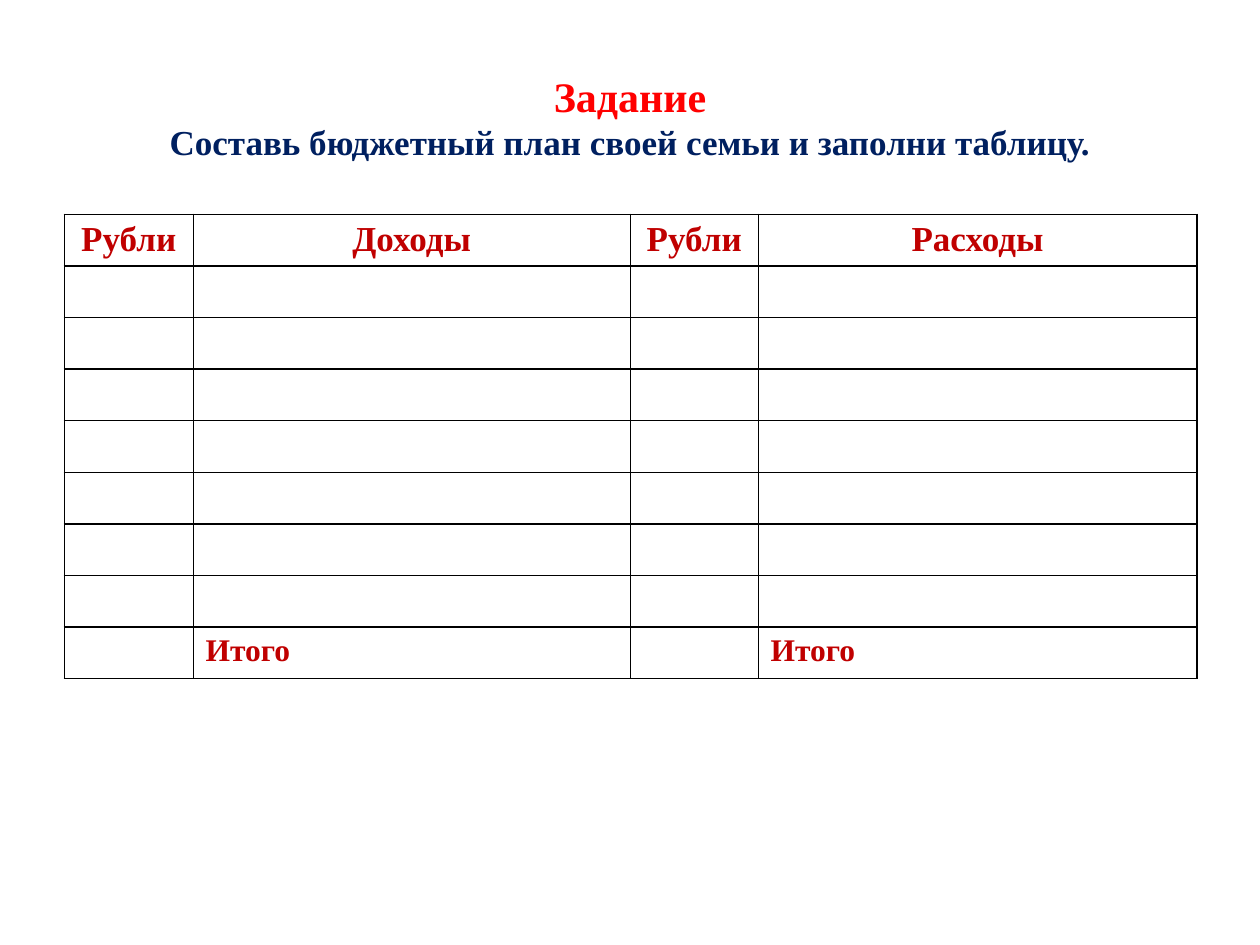
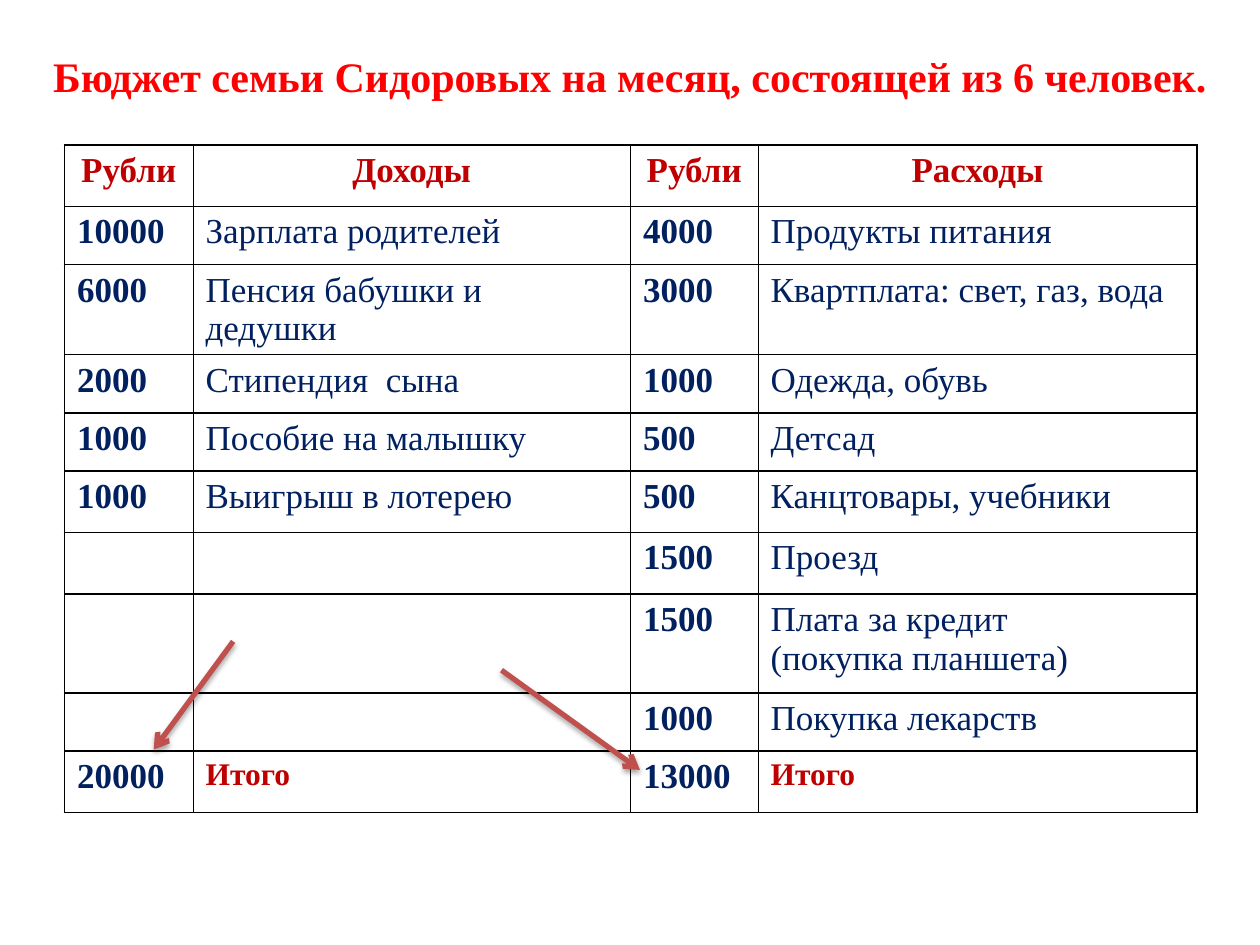
"""Build two slides about a family budget: an empty plan and a filled example."""
from lxml import etree
from pptx import Presentation
from pptx import util as u
from pptx.dml.color import RGBColor
from pptx.enum import shapes, text
from pptx.oxml import ns

RED = RGBColor(0xFF, 0x00, 0x00)
DARK_RED = RGBColor(0xC0, 0x00, 0x00)
NAVY = RGBColor(0x00, 0x20, 0x60)
ARROW_RED = RGBColor(0xC0, 0x50, 0x4D)
BLACK = RGBColor(0x00, 0x00, 0x00)

FONT = "Times New Roman"
TABLE_LEFT = 1.3
COLUMN_WIDTHS = (2.59, 8.82, 2.57, 8.85)
HEADINGS = ("Рубли", "Доходы", "Рубли", "Расходы")
TOTAL = "Итого"
THICK, THIN = u.Pt(1), u.Pt(0.25)

PLAN_ROWS = [HEADINGS] + [("",) * 4] * 7 + [("", TOTAL, "", TOTAL)]
BUDGET_ROWS = [
    HEADINGS,
    ("10000", "Зарплата родителей", "4000", "Продукты питания"),
    ("6000", "Пенсия бабушки и дедушки", "3000", "Квартплата: свет, газ, вода"),
    ("2000", "Стипендия  сына", "1000", "Одежда, обувь"),
    ("1000", "Пособие на малышку", "500", "Детсад"),
    ("1000", "Выигрыш в лотерею", "500", "Канцтовары, учебники"),
    ("", "", "1500", "Проезд"),
    ("", "", "1500", "Плата за кредит\n(покупка планшета)"),
    ("", "", "1000", "Покупка лекарств"),
    ("20000", TOTAL, "13000", TOTAL),
]
PLAN_HEIGHTS = [1.04] * len(PLAN_ROWS)
BUDGET_HEIGHTS = [1.24] + [1.17] * 4 + [1.24] * 2 + [2.0, 1.17, 1.24]


def add_element(parent, tag, **attributes):
    """Append a DrawingML element with the given attributes."""
    element = etree.SubElement(parent, ns.qn(tag))
    for name, value in attributes.items():
        element.set(name, str(value))
    return element


class BudgetDeck:
    """Hold the deck, its style and the slide being filled."""

    def __init__(self):
        """Start an empty deck of 10 by 7.5 inches."""
        self.deck = Presentation()
        self.deck.slide_width = u.Cm(25.4)
        self.deck.slide_height = u.Cm(19.05)
        self.slide = None

    def add_slide(self):
        """Add a title-only slide and make it current."""
        self.slide = self.deck.slides.add_slide(self.deck.slide_layouts[5])

    def add_span(self, para, words, size, color, bold=True):
        """Add one formatted run to a paragraph."""
        span = para.add_run()
        span.text = words
        span.font.name = FONT
        span.font.size = u.Pt(size)
        span.font.bold = bold
        span.font.color.rgb = color

    def add_title(self, left, top, width, height, lines):
        """Place the title and write its lines of (words, size, color)."""
        title = self.slide.shapes.title
        title.left, title.top = u.Cm(left), u.Cm(top)
        title.width, title.height = u.Cm(width), u.Cm(height)
        frame = title.text_frame
        frame.auto_size = text.MSO_AUTO_SIZE.NONE
        frame.vertical_anchor = text.MSO_ANCHOR.MIDDLE
        para = frame.paragraphs[0]
        para.alignment = text.PP_ALIGN.CENTER
        for number, line in enumerate(lines):
            if number:
                para.add_line_break()
            self.add_span(para, *line)

    def add_borders(self, cell, is_amount):
        """Draw the four black sides of a cell."""
        left, right = (THICK, THIN) if is_amount else (THIN, THICK)
        properties = cell._tc.get_or_add_tcPr()
        for side, width in (("L", left), ("R", right), ("T", THICK), ("B", THICK)):
            line = add_element(properties, f"a:ln{side}", w=int(width))
            fill = add_element(line, "a:solidFill")
            add_element(fill, "a:srgbClr", val=BLACK)

    def fill_cell(self, cell, words, is_heading, is_amount):
        """Write a cell in the style of its row and column."""
        self.add_borders(cell, is_amount)
        cell.fill.background()
        if not words:
            return
        is_total = words == TOTAL
        marked = is_heading or is_total
        frame = cell.text_frame
        for number, line in enumerate(words.split("\n")):
            para = frame.add_paragraph() if number else frame.paragraphs[0]
            if is_heading:
                para.alignment = text.PP_ALIGN.CENTER
            self.add_span(para, line, 18 if is_total else 20,
                          DARK_RED if marked else NAVY, marked or is_amount)

    def add_budget_table(self, top, rows, heights):
        """Add a table of amounts and items."""
        frame = self.slide.shapes.add_table(
            len(rows), len(COLUMN_WIDTHS), u.Cm(TABLE_LEFT), u.Cm(top),
            u.Cm(sum(COLUMN_WIDTHS)), u.Cm(sum(heights)))
        table = frame.table
        table.first_row = table.horz_banding = False
        for column, width in zip(table.columns, COLUMN_WIDTHS):
            column.width = u.Cm(width)
        for row_number, (row, height) in enumerate(zip(rows, heights)):
            table.rows[row_number].height = u.Cm(height)
            for column_number, words in enumerate(row):
                self.fill_cell(table.cell(row_number, column_number), words,
                               row_number == 0, column_number % 2 == 0)

    def add_arrow(self, *ends):
        """Add a shadowed arrow between two points."""
        arrow = self.slide.shapes.add_connector(
            shapes.MSO_CONNECTOR.STRAIGHT, *map(u.Cm, ends))
        arrow.line.color.rgb = ARROW_RED
        arrow.line.width = u.Pt(3)
        add_element(arrow.line._get_or_add_ln(), "a:tailEnd", type="arrow")
        effects = add_element(arrow._element.spPr, "a:effectLst")
        shadow = add_element(effects, "a:outerShdw", blurRad=int(u.Pt(3.1)),
                             dist=int(u.Pt(1.8)), dir=90 * 60000, rotWithShape=0)
        color = add_element(shadow, "a:srgbClr", val=BLACK)
        add_element(color, "a:alpha", val=35000)


def main():
    """Build both slides and save the deck."""
    budget = BudgetDeck()

    budget.add_slide()
    budget.add_title(1.27, 0.76, 22.86, 3.18, [
        ("Задание", 24, RED),
        ("Составь бюджетный план своей семьи и заполни таблицу.", 20, NAVY),
    ])
    budget.add_budget_table(4.32, PLAN_ROWS, PLAN_HEIGHTS)

    budget.add_slide()
    budget.add_title(0.5, 0.76, 24.4, 1.55, [
        ("Бюджет семьи Сидоровых на месяц, состоящей из 6 человек.", 24, RED),
    ])
    budget.add_budget_table(2.92, BUDGET_ROWS, BUDGET_HEIGHTS)
    budget.add_arrow(4.7, 12.93, 3.1, 15.11)
    budget.add_arrow(10.11, 13.51, 12.9, 15.52)

    budget.deck.save("out.pptx")


if __name__ == "__main__":
    main()
